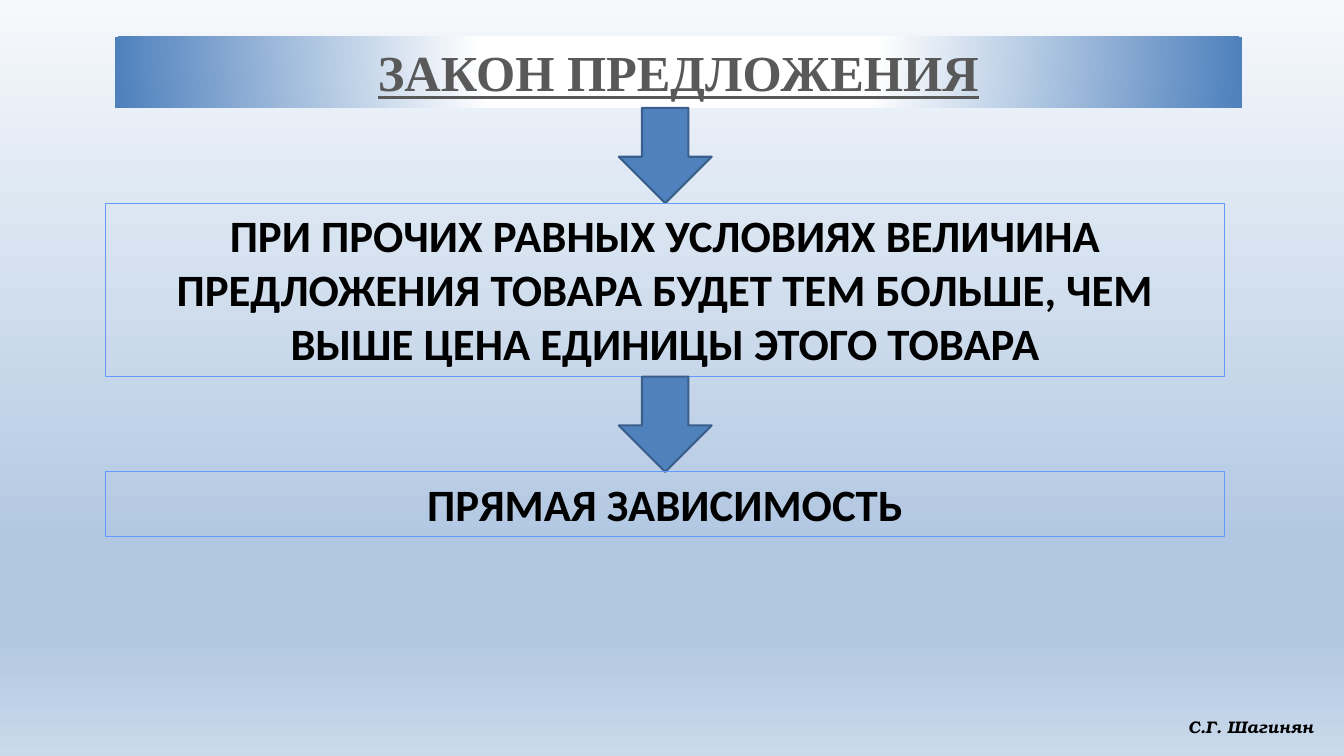
"""Build a slide on the law of supply: a banner and two boxes linked by arrows."""
from lxml import etree
from pptx import Presentation
from pptx.dml.color import RGBColor
from pptx.enum import shapes, text
from pptx.oxml import ns
from pptx.util import Cm, Pt

TITLE = "ЗАКОН ПРЕДЛОЖЕНИЯ"
BOXES = [
    ("ПРИ ПРОЧИХ РАВНЫХ УСЛОВИЯХ ВЕЛИЧИНА ПРЕДЛОЖЕНИЯ ТОВАРА "
     "БУДЕТ ТЕМ БОЛЬШЕ, ЧЕМ ВЫШЕ ЦЕНА ЕДИНИЦЫ ЭТОГО ТОВАРА", 4.37),
    ("ПРЯМАЯ ЗАВИСИМОСТЬ", 1.63),
]
AUTHOR = "С.Г. Шагинян"

WHITE = RGBColor(0xFF, 0xFF, 0xFF)
BLACK = RGBColor(0, 0, 0)
GRAY = RGBColor(0x59, 0x59, 0x59)
BLUE = RGBColor(0x4F, 0x81, 0xBD)
DARK_BLUE = RGBColor(0x3A, 0x5F, 0x8C)
BOX_BLUE = RGBColor(0x66, 0x99, 0xFF)
SKY = RGBColor(0xF6, 0xF9, 0xFC)
MIST = RGBColor(0xB0, 0xC6, 0xE1)
HAZE = RGBColor(0xCA, 0xD9, 0xEB)

BACKGROUND_STOPS = [(0, SKY), (74, MIST), (83, MIST), (100, HAZE)]
BANNER_STOPS = [(0, WHITE), (35, WHITE), (100, BLUE)]

BANNER = (2.9, 0.92, 28.4, 1.8)
AUTHOR_PLACE = (29.69, 17.93, 3.95, 0.76)
BOX_LEFT, BOX_WIDTH = 2.67, 28.19
ARROW_WIDTH, ARROW_HEIGHT = 2.34, 2.4


def paint_gradient(element, stops, circular=False):
    """Replace the first solid fill in the element with a gradient."""
    gradient = etree.Element(ns.qn("a:gradFill"), rotWithShape="1")
    stop_list = etree.SubElement(gradient, ns.qn("a:gsLst"))
    for position, color in stops:
        stop = etree.SubElement(stop_list, ns.qn("a:gs"), pos=str(position * 1000))
        etree.SubElement(stop, ns.qn("a:srgbClr"), val=str(color))
    if circular:
        focus = etree.SubElement(gradient, ns.qn("a:path"), path="circle")
        etree.SubElement(focus, ns.qn("a:fillToRect"),
                         l="50000", t="-80000", r="50000", b="180000")
    else:
        etree.SubElement(gradient, ns.qn("a:lin"), ang="5400000", scaled="0")
    solid = next(element.iter(ns.qn("a:solidFill")))
    solid.getparent().replace(solid, gradient)


def write(shape, words, font_name, size, color, align):
    """Put one bold run into the shape and return its font."""
    frame = shape.text_frame
    frame.word_wrap = True
    frame.auto_size = text.MSO_AUTO_SIZE.NONE
    frame.vertical_anchor = text.MSO_ANCHOR.TOP
    paragraph = frame.paragraphs[0]
    paragraph.alignment = align
    run = paragraph.add_run()
    run.text = words
    run.font.name, run.font.size, run.font.bold = font_name, Pt(size), True
    run.font.color.rgb = color
    return run.font


def add_shape(slide, kind, place, line_color, line_width):
    """Add an unfilled, shadowless preset shape with an outline."""
    shape = slide.shapes.add_shape(kind, *map(Cm, place))
    shape.shadow.inherit = False
    shape.fill.background()
    shape.line.color.rgb = line_color
    shape.line.width = Pt(line_width)
    return shape


def main():
    """Assemble and save the slide."""
    presentation = Presentation()
    presentation.slide_width, presentation.slide_height = Cm(33.87), Cm(19.05)
    slide = presentation.slides.add_slide(presentation.slide_layouts[5])
    slide.background.fill.solid()
    paint_gradient(slide.element, BACKGROUND_STOPS)

    title = slide.shapes.title
    title.left, title.top, title.width, title.height = map(Cm, BANNER)
    title.fill.solid()
    paint_gradient(title.element, BANNER_STOPS, circular=True)
    write(title, TITLE, "Times New Roman", 36, GRAY,
          text.PP_ALIGN.CENTER).underline = True

    arrow_left = BOX_LEFT + (BOX_WIDTH - ARROW_WIDTH) / 2
    bottom = BANNER[1] + BANNER[3]
    for words, height in BOXES:
        arrow = add_shape(slide, shapes.MSO_SHAPE.DOWN_ARROW,
                          (arrow_left, bottom, ARROW_WIDTH, ARROW_HEIGHT), DARK_BLUE, 1.5)
        arrow.fill.solid()
        arrow.fill.fore_color.rgb = BLUE
        top = bottom + ARROW_HEIGHT
        box = add_shape(slide, shapes.MSO_SHAPE.RECTANGLE,
                        (BOX_LEFT, top, BOX_WIDTH, height), BOX_BLUE, 0.75)
        write(box, words, "Calibri", 32, BLACK, text.PP_ALIGN.CENTER)
        bottom = top + height

    author = slide.shapes.add_textbox(*map(Cm, AUTHOR_PLACE))
    write(author, AUTHOR, "TeX Gyre Bonum", 12, BLACK,
          text.PP_ALIGN.LEFT).italic = True

    presentation.save("out.pptx")


if __name__ == "__main__":
    main()
